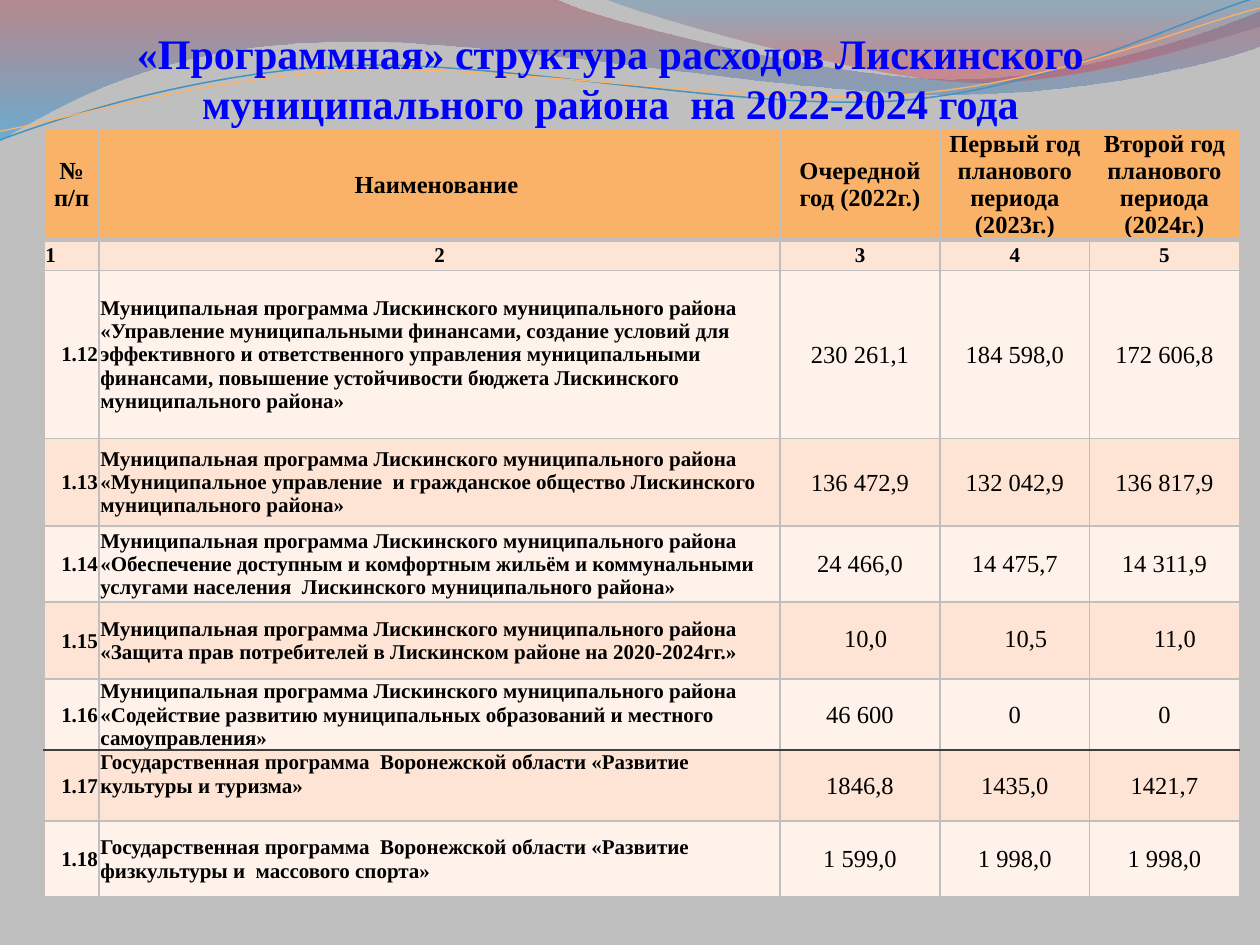
from dataclasses import dataclass

import pptx
import pptx.dml.color
import pptx.enum.text
import pptx.oxml
import pptx.util
from pptx.enum.text import MSO_ANCHOR, PP_ALIGN

Pt = pptx.util.Pt
qn = pptx.oxml.ns.qn
NS = 'xmlns:a="http://schemas.openxmlformats.org/drawingml/2006/main"'


@dataclass
class Theme:
    font: str = "Times New Roman"
    back: str = "BFBFBF"
    title: str = "0000FF"
    text: str = "000000"
    header: str = "F9B268"
    bands: tuple = ("FDE4D4", "FEF2EB")
    grid: str = "BFBFBF"
    rule: str = "3F3F3F"
    title_size: int = 24
    large: int = 14
    small: int = 12
    line_height: float = 1.11


theme = Theme()
rgb = pptx.dml.color.RGBColor.from_string


def add_wave(shapes, start, segments, closed):
    """Draw an outline in points; a 6-tuple is a Bezier curve, a 2-tuple a line."""
    anchors = [start] + [seg[-2:] for seg in segments]
    left, top = (min(values) for values in zip(*anchors))
    # Builder units are hundredths of a point
    fb = shapes.build_freeform(start[0] * 100, start[1] * 100, scale=Pt(1) / 100)
    fb.add_line_segments([(x * 100, y * 100) for x, y in anchors[1:]], close=closed)
    sp = fb.convert_to_shape()
    sp.shadow.inherit = False
    lines = list(sp._element.iter(qn("a:lnTo")))
    for line, seg in zip(lines, segments):
        if len(seg) == 6:
            pts = "".join(f'<a:pt x="{round((x - left) * 100)}" y="{round((y - top) * 100)}"/>'
                          for x, y in zip(seg[::2], seg[1::2]))
            line.getparent().replace(line, pptx.oxml.parse_xml(
                f'<a:cubicBezTo {NS}>{pts}</a:cubicBezTo>'))
    return sp


def add_text(tf, text, size, color, bold, align):
    p = tf.paragraphs[0]
    p.alignment = align
    r = p.add_run()
    r.text = text
    r.font.name, r.font.size, r.font.bold = theme.font, Pt(size), bold
    r.font.color.rgb = rgb(color)
    return p


prs = pptx.Presentation()
prs.slide_width, prs.slide_height = Pt(720), Pt(540)
s = prs.slides.add_slide(prs.slide_layouts[6])
s.background.fill.solid()
s.background.fill.fore_color.rgb = rgb(theme.back)

# Translucent waves: start, segments, (position %, colour, opacity %) stops
waves = [
    ((0, 0), [(317, -1), (343, 12, 478, 45, 546, 45), (614, 45, 690, 19, 720, 6),
              (721, 26), (708, 32, 626, 55, 537, 54), (448, 54, 275, 20, 185, 24),
              (93, 26, 33, 60, -1, 81)],
     [(0, "A84752", 45), (100, "249FE6", 55)]),
    ((345, -1), [(366, 8, 491, 45, 554, 47), (616, 49, 692, 23, 720, 15), (720, 0)],
     [(0, "2A7EAF", 30), (80, "D24B5A", 45)]),
]
for start, segments, stops in waves:
    sp = add_wave(s.shapes, start, segments, True)
    sp.line.fill.background()
    gs = "".join(f'<a:gs pos="{pos * 1000}"><a:srgbClr val="{color}">'
                 f'<a:alpha val="{alpha * 1000}"/></a:srgbClr></a:gs>'
                 for pos, color, alpha in stops)
    sp._element.spPr.find(qn("a:custGeom")).addnext(pptx.oxml.parse_xml(
        f'<a:gradFill {NS} rotWithShape="1"><a:gsLst>{gs}</a:gsLst>'
        '<a:lin ang="5400000" scaled="0"/></a:gradFill>'))

curves = [
    ((0, 80), [(34.5, 67, 114, 41, 199.5, 37.5), (284.5, 34, 427, 64, 513.5, 57.5),
               (600, 51, 675.5, 11, 718.5, -1.5)], "4592BF", 0.85),
    ((0, 75), [(34, 69, 118, 44, 204, 40), (290, 37, 430, 60.5, 516, 54),
               (602, 48, 678, 15, 720, 4.5)], "F9B268", 0.75),
]
for start, segments, color, width in curves:
    sp = add_wave(s.shapes, start, segments, False)
    sp.fill.background()
    sp.line.color.rgb = rgb(color)
    sp.line.width = Pt(width)

tf = s.shapes.add_textbox(Pt(16.8), Pt(16.8), Pt(664), Pt(56.2)).text_frame
tf.word_wrap = True
tf.vertical_anchor = MSO_ANCHOR.BOTTOM
tf.margin_left = tf.margin_right = tf.margin_bottom = 0
tf.margin_top = Pt(3.6)
add_text(tf, "«Программная» структура расходов Лискинского муниципального района  на 2022-2024 года",
         theme.title_size, theme.title, True, PP_ALIGN.CENTER)

municipal = "Муниципальная программа Лискинского муниципального района "
state = "Государственная программа  Воронежской области "
rows = [
    ("№ п/п", "Наименование ", "Очередной год (2022г.)",
     "Первый год планового периода (2023г.)", "Второй год планового периода (2024г.)"),
    ("1", "2", "3", "4", "5"),
    ("1.12", municipal + "«Управление муниципальными финансами, создание условий для эффективного "
     "и ответственного управления муниципальными финансами, повышение устойчивости бюджета "
     "Лискинского муниципального района»", "230 261,1", "184 598,0", "172 606,8"),
    ("1.13", municipal + "«Муниципальное управление  и гражданское общество Лискинского "
     "муниципального района»", "136 472,9", "132 042,9", "136 817,9"),
    ("1.14", municipal + "«Обеспечение доступным и комфортным жильём и коммунальными услугами "
     "населения  Лискинского муниципального района»", "24 466,0", "14 475,7", "14 311,9"),
    ("1.15", municipal + "«Защита прав потребителей в Лискинском районе на 2020-2024гг.»",
     "10,0", "10,5", "11,0"),
    ("1.16", municipal + "«Содействие развитию муниципальных образований и местного "
     "самоуправления»", "46 600", "0", "0"),
    ("1.17", state + "«Развитие культуры и туризма»", "1846,8", "1435,0", "1421,7"),
    ("1.18", state + "«Развитие физкультуры и  массового спорта»",
     "1 599,0", "1 998,0", "1 998,0"),
]
widths = [31.5, 389, 91.5, 85.5, 85.5]
heights = [63.5, 17.5, 96, 50, 43.5, 44, 40.5, 40.5, 43.5]
HEADER, NUMBERS, RIGHTS, LOCAL, CULTURE = 0, 1, 5, 6, 7

table = s.shapes.add_table(len(rows), len(widths), Pt(25.2), Pt(73.5),
                           Pt(sum(widths)), Pt(sum(heights))).table
for column, width in zip(table.columns, widths):
    column.width = Pt(width)
for row, height in zip(table.rows, heights):
    row.height = Pt(height)

for i, row in enumerate(rows):
    top = (theme.rule, 1) if i == CULTURE else (theme.grid, 3 if i == NUMBERS else 1)
    bottom = (theme.rule, 1) if i == LOCAL else (theme.grid, 3 if i == HEADER else 1)
    side = (theme.grid, 1)
    for j, text in enumerate(row):
        cell = table.cell(i, j)
        tcPr = cell._tc.get_or_add_tcPr()
        for tag, (color, width) in zip("LRTB", (side, side, top, bottom)):
            tcPr.append(pptx.oxml.parse_xml(
                f'<a:ln{tag} {NS} w="{Pt(width)}"><a:solidFill><a:srgbClr val="{color}"/>'
                f'</a:solidFill></a:ln{tag}>'))
        cell.fill.solid()
        cell.fill.fore_color.rgb = rgb(theme.header if i == HEADER else theme.bands[(i + 1) % 2])
        cell.margin_left = cell.margin_right = cell.margin_top = Pt(0.72)
        cell.margin_bottom = 0
        cell.vertical_anchor = MSO_ANCHOR.TOP if (i, j) == (CULTURE, 1) else MSO_ANCHOR.MIDDLE

        value = i > NUMBERS and j > 1
        if i == RIGHTS and value:
            align = PP_ALIGN.JUSTIFY
        elif i == HEADER or j > 1 or (i, j) == (NUMBERS, 1):
            align = PP_ALIGN.CENTER
        elif i > NUMBERS and j == 0:
            align = PP_ALIGN.RIGHT
        else:
            align = PP_ALIGN.LEFT
        size = theme.large if i == HEADER or value else theme.small
        p = add_text(cell.text_frame, text, size, theme.text, not value, align)
        p.line_spacing = Pt(round(size * theme.line_height, 1))
        if i == RIGHTS and value:
            p._p.get_or_add_pPr().set("marL", str(Pt(36)))
            cell.margin_bottom = Pt(2.5)

prs.save("out.pptx")
